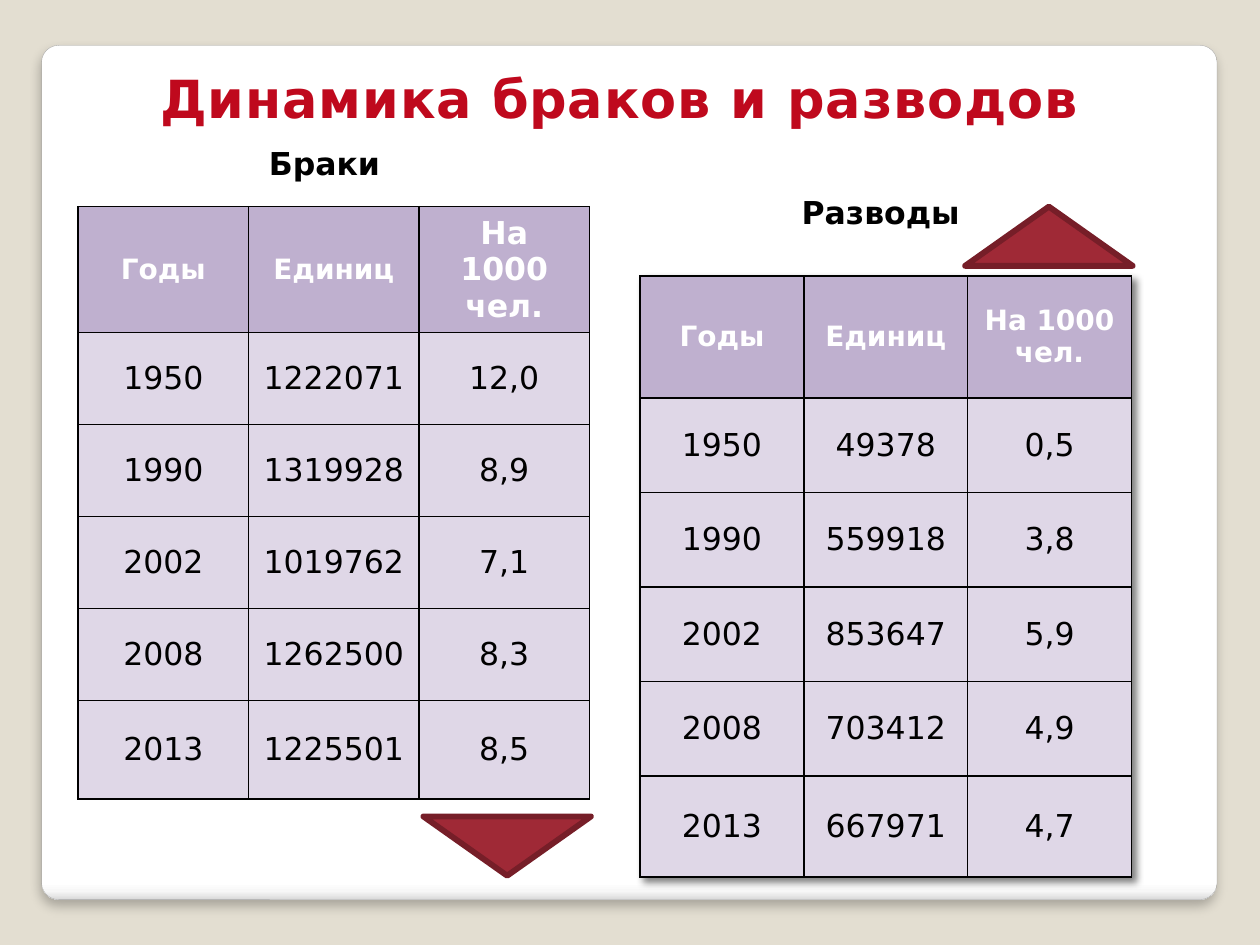
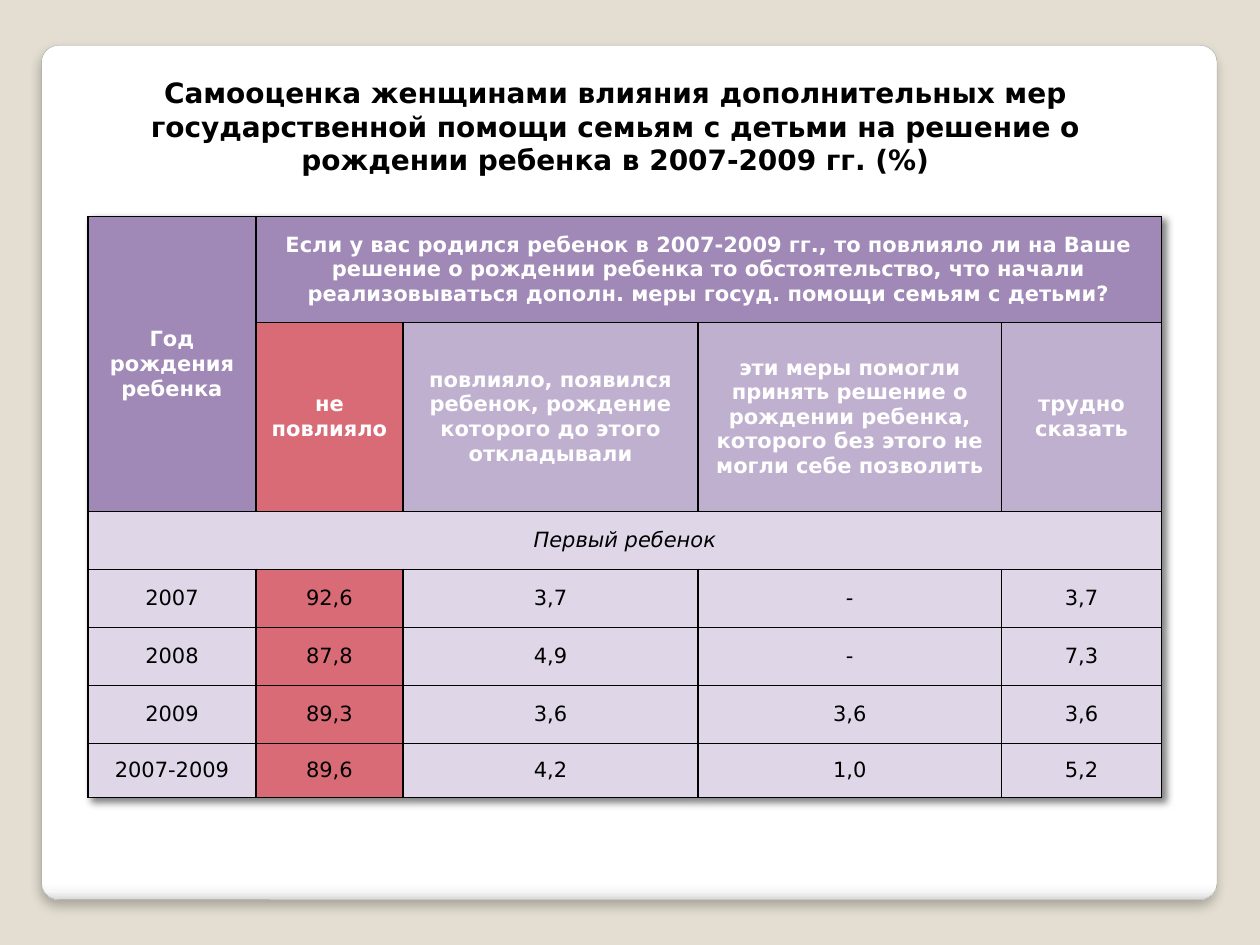
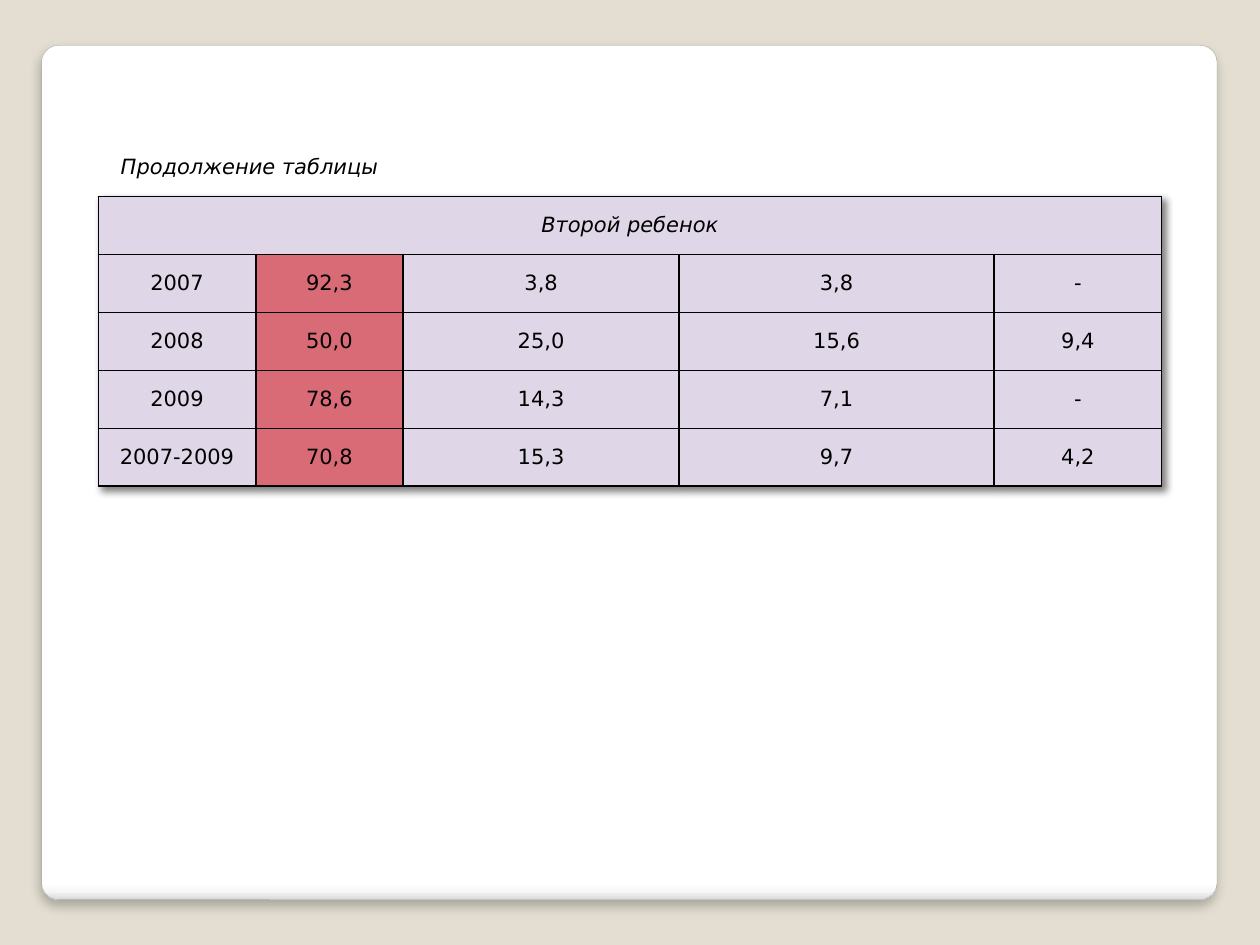
"""Build three slides on marriages, divorces and the effect of family support."""
import pptx
import pptx.dml.color
import pptx.enum.shapes
import pptx.enum.text
import pptx.oxml
import pptx.oxml.ns
import pptx.util

COLUMNS, ROWS = 100, 75
TITLE_ONLY, BLANK = 5, 6
YEARS = ["1950", "1990", "2002", "2008", "2013"]
BIRTH_YEARS = ["2007", "2008", "2009", "2007-2009"]
HEADINGS = ["Годы", "Единиц", "На 1000 чел."]


def color(value):
    return pptx.dml.color.RGBColor.from_string(value)


def xml(text):
    tag = text.split()[0]
    return pptx.oxml.parse_xml(f"<{tag} {pptx.oxml.ns.nsdecls('a')}{text[len(tag):]}")


def shadow(blur, distance, angle, opacity):
    return xml(f'a:outerShdw blurRad="{blur * 12700}" dist="{distance * 12700}" dir="{angle * 60000}" '
               f'algn="t" rotWithShape="0"><a:srgbClr val="000000">'
               f'<a:alpha val="{opacity * 1000}"/></a:srgbClr></a:outerShdw>')


class Deck:
    """Hold the shared style and the slide being filled."""
    font = "DejaVu Sans"
    black, white = "000000", "FFFFFF"
    backdrop = "E3DED1"
    band, heading, body, accent = "A088B7", "BFB0CF", "DFD7E7", "D96B77"
    arrow, arrow_edge = "9F2936", "761E28"

    def __init__(self):
        self.show = pptx.Presentation()
        self.show.slide_width = pptx.util.Inches(10)
        self.show.slide_height = pptx.util.Inches(7.5)
        self.slide = None

    def x(self, columns):
        return round(self.show.slide_width * columns / COLUMNS)

    def y(self, rows):
        return round(self.show.slide_height * rows / ROWS)

    def box(self, left, top, width, height):
        return self.x(left), self.y(top), self.x(width), self.y(height)

    def add_slide(self, layout):
        self.slide = self.show.slides.add_slide(self.show.slide_layouts[layout])

    def gradient(self, fill, element, stops):
        fill.gradient()
        fill.gradient_angle = 270
        stop_list = next(element.iter(pptx.oxml.ns.qn("a:gsLst")))
        stop_list[:] = [xml(f'a:gs pos="{share * 1000}"><a:srgbClr val="{value}"/></a:gs>')
                        for share, value in stops]

    def master_panel(self):
        master = self.show.slide_master
        master.background.fill.solid()
        master.background.fill.fore_color.rgb = color(self.backdrop)
        panel = self.shape("ROUNDED_RECTANGLE", (3.3, 3.6, 93.3, 67.8), self.white, "A4A4A4", 0.16)
        panel.adjustments[0] = 0.02
        self.gradient(panel.fill, panel.element,
                      [(0, self.white), (98, self.white), (99, "F7F7F7"), (100, "DADADA")])
        next(panel.element.iter(pptx.oxml.ns.qn("a:effectLst"))).append(shadow(6, 4, 90, 25))
        next(panel.element.iter(pptx.oxml.ns.qn("p:cNvPr"))).set("id", "50")
        master.placeholders[0].element.addprevious(panel.element)

    def shape(self, kind, place, fill, edge, weight, rotation=0):
        outline = self.slide.shapes.add_shape(
            getattr(pptx.enum.shapes.MSO_SHAPE, kind), *self.box(*place))
        outline.shadow.inherit = False
        outline.fill.solid()
        outline.fill.fore_color.rgb = color(fill)
        outline.line.color.rgb = color(edge)
        outline.line.width = pptx.util.Pt(weight)
        outline.rotation = rotation
        return outline

    def add_text(self, frame, text, size, ink=black, bold=False, italic=False, align="CENTER"):
        paragraph = frame.paragraphs[0]
        paragraph.alignment = getattr(pptx.enum.text.PP_ALIGN, align)
        run = paragraph.add_run()
        run.text = text
        run.font.name = self.font
        run.font.size = pptx.util.Pt(size)
        run.font.bold, run.font.italic = bold, italic
        run.font.color.rgb = color(ink)
        return run

    def title(self, place, text, size, wrap=True):
        heading = self.slide.shapes.title
        heading.left, heading.top, heading.width, heading.height = self.box(*place)
        heading.text_frame.word_wrap = wrap
        heading.text_frame.auto_size = pptx.enum.text.MSO_AUTO_SIZE.NONE
        heading.text_frame.vertical_anchor = pptx.enum.text.MSO_ANCHOR.TOP
        return self.add_text(heading.text_frame, text, size, bold=True)

    def label(self, place, text, size, **style):
        frame = self.slide.shapes.add_textbox(*self.box(*place)).text_frame
        frame.word_wrap = True
        self.add_text(frame, text, size, **style)

    def table(self, left, top, widths, heights, rows, headers, sizes, accent=None, shaded=True):
        frame = self.slide.shapes.add_table(
            len(rows), len(widths), *self.box(left, top, sum(widths), sum(heights)))
        grid = frame.table
        grid.first_row = grid.horz_banding = False
        for column, width in zip(grid.columns, widths):
            column.width = self.x(width)
        for row, height in zip(grid.rows, heights):
            row.height = self.y(height)
        for r, row in enumerate(rows):
            for c, text in enumerate(row):
                if text is not None:
                    self.merge(grid, rows, r, c)
                self.cell(grid.cell(r, c), text, r, headers, sizes[r >= headers], c == accent)
        for properties in frame.element.iter(pptx.oxml.ns.qn("a:tcPr")):
            for place, side in enumerate("LRTB"):
                properties.insert(place, xml(
                    f'a:ln{side} w="12700"><a:solidFill><a:srgbClr val="{self.black}"/>'
                    f'</a:solidFill></a:ln{side}>'))
        if shaded:
            effects = xml("a:effectLst />")
            effects.append(shadow(4, 3, 45, 50))
            next(frame.element.iter(pptx.oxml.ns.qn("a:tblPr"))).insert(0, effects)
        return grid

    def merge(self, grid, rows, r, c):
        right, bottom = c, r
        while right + 1 < len(rows[r]) and rows[r][right + 1] is None:
            right += 1
        while bottom + 1 < len(rows) and not any(rows[bottom + 1][:c + 1]):
            bottom += 1
        if (right, bottom) != (c, r):
            grid.cell(r, c).merge(grid.cell(bottom, right))

    def cell(self, cell, text, r, headers, size, accented):
        header = r < headers
        merged = cell.is_merge_origin or cell.is_spanned
        fill = self.body
        if accented and not merged:
            fill = self.accent
        elif header:
            fill = self.heading if r == headers - 1 else self.band
        cell.vertical_anchor = pptx.enum.text.MSO_ANCHOR.MIDDLE
        cell.fill.solid()
        cell.fill.fore_color.rgb = color(fill)
        if text is not None:
            self.add_text(cell.text_frame, text, size, self.white if header else self.black,
                          bold=header, italic=merged and not header)


def group(name, figures):
    return [[name] + [None] * 4] + [[year, *row.split()] for year, row in zip(BIRTH_YEARS, figures)]


def dynamics(deck):
    deck.add_slide(TITLE_ONLY)
    deck.master_panel()
    heading = deck.title((11.4, 4.7, 77.1, 6.1), "Динамика браков и разводов ", 30, wrap=False)
    element = deck.slide.shapes.title.element
    deck.gradient(heading.font.fill, element, [(25, "BF091D"), (100, "8B0211")])
    next(element.iter(pptx.oxml.ns.qn("a:rPr"))).set("spc", "50")

    deck.label((20.3, 10.9, 10.9, 4), "Браки", 18, bold=True)
    deck.label((62.5, 14.8, 14.8, 4), "Разводы", 18, bold=True)
    marriages = zip(YEARS, ["1222071", "1319928", "1019762", "1262500", "1225501"],
                    ["12,0", "8,9", "7,1", "8,3", "8,5"])
    divorces = zip(YEARS, ["49378", "559918", "853647", "703412", "667971"],
                   ["0,5", "3,8", "5,9", "4,9", "4,7"])
    rates = deck.table(6.2, 16.4, [13.53] * 3, [9.7] + [7.3] * 4 + [7.8],
                       [HEADINGS, *marriages], 1, (16, 18), shaded=False)
    rates.cell(0, 2).text_frame.paragraphs[0].runs[0].font.size = pptx.util.Pt(18)
    deck.table(50.8, 21.9, [13] * 3, [9.7] + [7.5] * 4 + [8],
               [HEADINGS, *divorces], 1, (16, 18))
    for left, top, rotation in [(33.6, 64.8, 180), (76.6, 16.4, 0)]:
        deck.shape("ISOSCELES_TRIANGLE", (left, top, 13.3, 4.7),
                   deck.arrow, deck.arrow_edge, 3.35, rotation)


def first_child(deck):
    deck.add_slide(TITLE_ONLY)
    deck.title((8.6, 5.5, 80.5, 9.1),
               "Самооценка женщинами влияния дополнительных мер государственной помощи семьям "
               "с детьми на решение о рождении ребенка в 2007-2009 гг. (%)", 16)
    question = ("Если у вас родился ребенок в 2007-2009 гг., то повлияло ли на Ваше решение "
                "о рождении ребенка то обстоятельство, что начали реализовываться дополн. "
                "меры госуд. помощи семьям с детьми?")
    answers = ["не повлияло",
               "повлияло, появился ребенок, рождение которого до этого откладывали",
               "эти меры помогли принять решение о рождении ребенка, которого без этого "
               "не могли себе позволить",
               "трудно сказать"]
    figures = ["92,6 3,7 - 3,7", "87,8 4,9 - 7,3", "89,3 3,6 3,6 3,6", "89,6 4,2 1,0 5,2"]
    deck.table(7, 17.2, [13.3, 11.7, 23.4, 24.1, 12.7], [8.4, 15] + [4.6] * 4 + [4.3],
               [["Год рождения ребенка", question, None, None, None], [None, *answers],
                *group("Первый ребенок", figures)], 2, (12, 12), accent=1)


def second_child(deck):
    deck.add_slide(BLANK)
    figures = ["92,3 3,8 3,8 -", "50,0 25,0 15,6 9,4", "78,6 14,3 7,1 -", "70,8 15,3 9,7 4,2"]
    deck.table(7.8, 15.6, [12.5, 11.7, 21.9, 25, 13.3], [4.6] * 5,
               group("Второй ребенок", figures), 0, (12, 12), accent=1)
    deck.label((8.6, 11.7, 37.5, 3), "Продолжение таблицы", 12, italic=True, align="LEFT")


def main():
    deck = Deck()
    dynamics(deck)
    first_child(deck)
    second_child(deck)
    deck.show.save("out.pptx")


if __name__ == "__main__":
    main()
